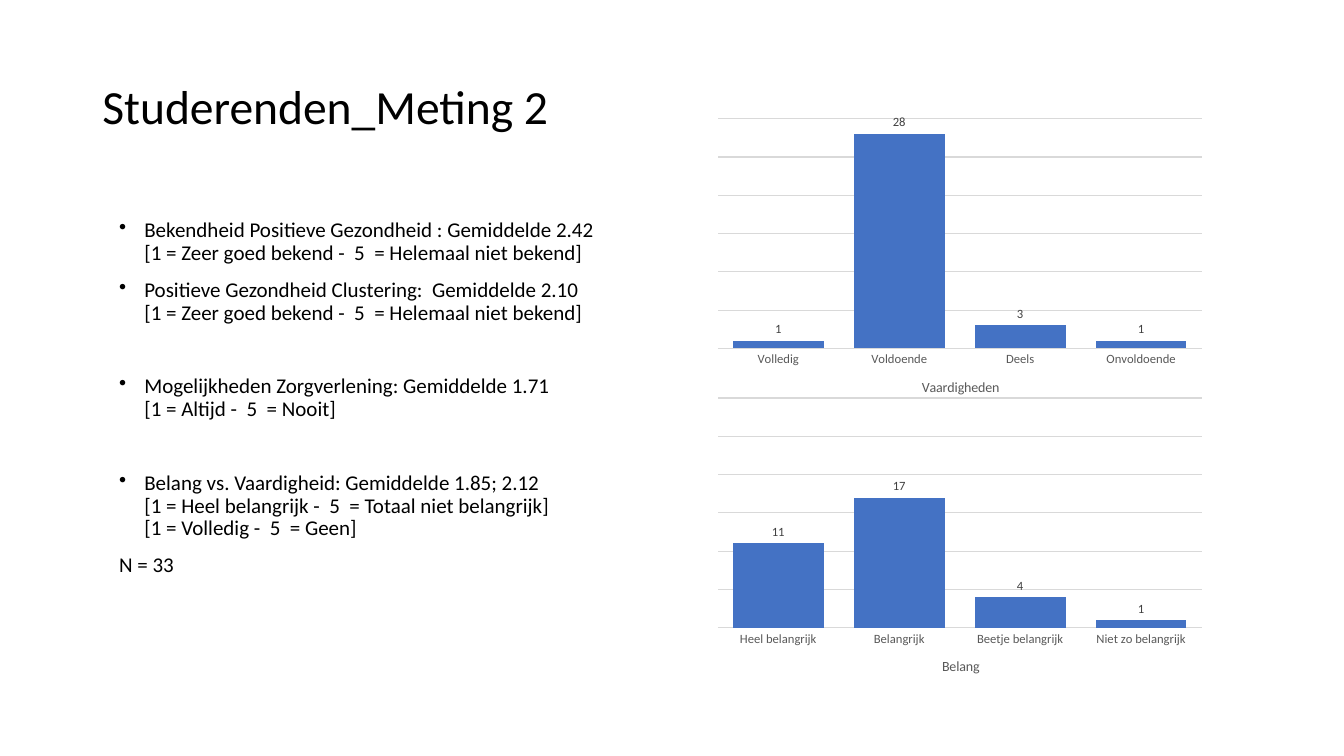
import pptx
import pptx.chart.data
import pptx.dml.color
import pptx.enum.chart
import pptx.oxml
import pptx.oxml.ns
import pptx.util

Pt = pptx.util.Pt
FACE = "Calibri"
NOTES = [
    (0, True, "Bekendheid Positieve Gezondheid : Gemiddelde 2.42\v"
     "[1 = Zeer goed bekend -  5  = Helemaal niet bekend]"),
    (10, True, "Positieve Gezondheid Clustering:  Gemiddelde 2.10\v"
     "[1 = Zeer goed bekend -  5  = Helemaal niet bekend]"),
    (36.5, True, "Mogelijkheden Zorgverlening: Gemiddelde 1.71\v"
     "[1 = Altijd -  5  = Nooit]"),
    (36.5, True, "Belang vs. Vaardigheid: Gemiddelde 1.85; 2.12\v"
     "[1 = Heel belangrijk -  5  = Totaal niet belangrijk]\v"
     "[1 = Volledig -  5  = Geen]"),
    (10, False, "N = 33"),
]
PLOTS = [
    ("Vaardigheden", 0.42, {"Volledig": 1, "Voldoende": 28, "Deels": 3,
                            "Onvoldoende": 1}),
    ("Belang", 0.46, {"Heel belangrijk": 11, "Belangrijk": 17,
                      "Beetje belangrijk": 4, "Niet zo belangrijk": 1}),
]


def tint(code):
    """Turn a hex string into a colour."""
    return pptx.dml.color.RGBColor.from_string(code)


def apply(item, form):
    """Set every attribute named in a dict of format values."""
    for key, val in form.items():
        setattr(item, key, val)


def style(font, size, code):
    """Set face, size and colour of a font."""
    apply(font, {"name": FACE, "size": Pt(size), "bold": False})
    font.color.rgb = tint(code)


def write(slide, box, size, items):
    """Fill a text box with paragraphs of (space before, bullet, text)."""
    frame = slide.shapes.add_textbox(*map(Pt, box)).text_frame
    frame.word_wrap = True
    for rank, (gap, dot, text) in enumerate(items):
        para = frame.add_paragraph() if rank else frame.paragraphs[0]
        para.text = text
        apply(para, {"line_spacing": 0.9, "space_before": Pt(gap)})
        if dot:
            props = para._p.get_or_add_pPr()
            props.set("marL", str(Pt(18)))
            props.set("indent", str(-Pt(18)))
            mark = pptx.oxml.parse_xml(
                f'<a:buChar {pptx.oxml.ns.nsdecls("a")} char="•"/>')
            props.append(mark)
        for run in para.runs:
            style(run.font, size, "000000")


def place(node, spot, rank, inner=False):
    """Pin a chart part at given shares of the chart's area."""
    for old in node.findall(pptx.oxml.ns.qn("c:layout")):
        node.remove(old)
    body = '<c:layoutTarget val="inner"/>' if inner else ""
    body += '<c:xMode val="edge"/><c:yMode val="edge"/>'
    body += "".join(f'<c:{key} val="{val}"/>' for key, val in spot.items())
    node.insert(rank, pptx.oxml.parse_xml(
        f'<c:layout {pptx.oxml.ns.nsdecls("c")}>'
        f'<c:manualLayout>{body}</c:manualLayout></c:layout>'))


def rule(line):
    """Draw a thin grey chart line."""
    line.color.rgb = tint("D9D9D9")
    line.width = Pt(0.75)


def draw(slide, box, name, left, counts):
    """Add one column chart with its caption below."""
    data = pptx.chart.data.CategoryChartData()
    data.categories = list(counts)
    data.add_series("Series 1", list(counts.values()))
    kind = pptx.enum.chart.XL_CHART_TYPE.COLUMN_CLUSTERED
    chart = slide.shapes.add_chart(kind, *map(Pt, box), data).chart
    apply(chart, {"has_legend": False, "has_title": False})
    style(chart.font, 10, "000000")
    plot = chart.plots[0]
    apply(plot, {"gap_width": 33, "overlap": -30,
                 "vary_by_categories": False, "has_data_labels": True})
    fill = plot.series[0].format.fill
    fill.solid()
    fill.fore_color.rgb = tint("4472C4")
    labels = plot.data_labels
    apply(labels, {
        "show_value": True,
        "position": pptx.enum.chart.XL_LABEL_POSITION.OUTSIDE_END})
    style(labels.font, 9, "404040")
    axis = chart.value_axis
    apply(axis, {"visible": False, "minimum_scale": 0, "maximum_scale": 30,
                 "major_unit": 5, "has_major_gridlines": True})
    rule(axis.major_gridlines.format.line)
    base = chart.category_axis
    base.major_tick_mark = pptx.enum.chart.XL_TICK_MARK.NONE
    rule(base.format.line)
    style(base.tick_labels.font, 9, "595959")
    title = base.axis_title
    title.text_frame.text = name
    style(title.text_frame.paragraphs[0].runs[0].font, 10, "595959")
    place(title._element, {"x": left, "y": 0.87}, 1)
    place(chart._chartSpace.chart.plotArea,
          {"x": 0.02, "y": 0.02, "w": 0.96, "h": 0.76}, 0, True)


def main():
    """Build the slide and save it."""
    deck = pptx.Presentation()
    apply(deck, {"slide_width": Pt(960), "slide_height": Pt(540)})
    slide = deck.slides.add_slide(deck.slide_layouts[6])
    write(slide, (66, 56, 420, 46), 34, [(0, False, "Studerenden_Meting 2")])
    write(slide, (78, 153.5, 381, 289), 15, NOTES)
    for rank, plot in enumerate(PLOTS):
        draw(slide, (505.5, 80.5 + rank * 199.5, 360, 216), *plot)
    deck.save("out.pptx")


if __name__ == "__main__":
    main()
